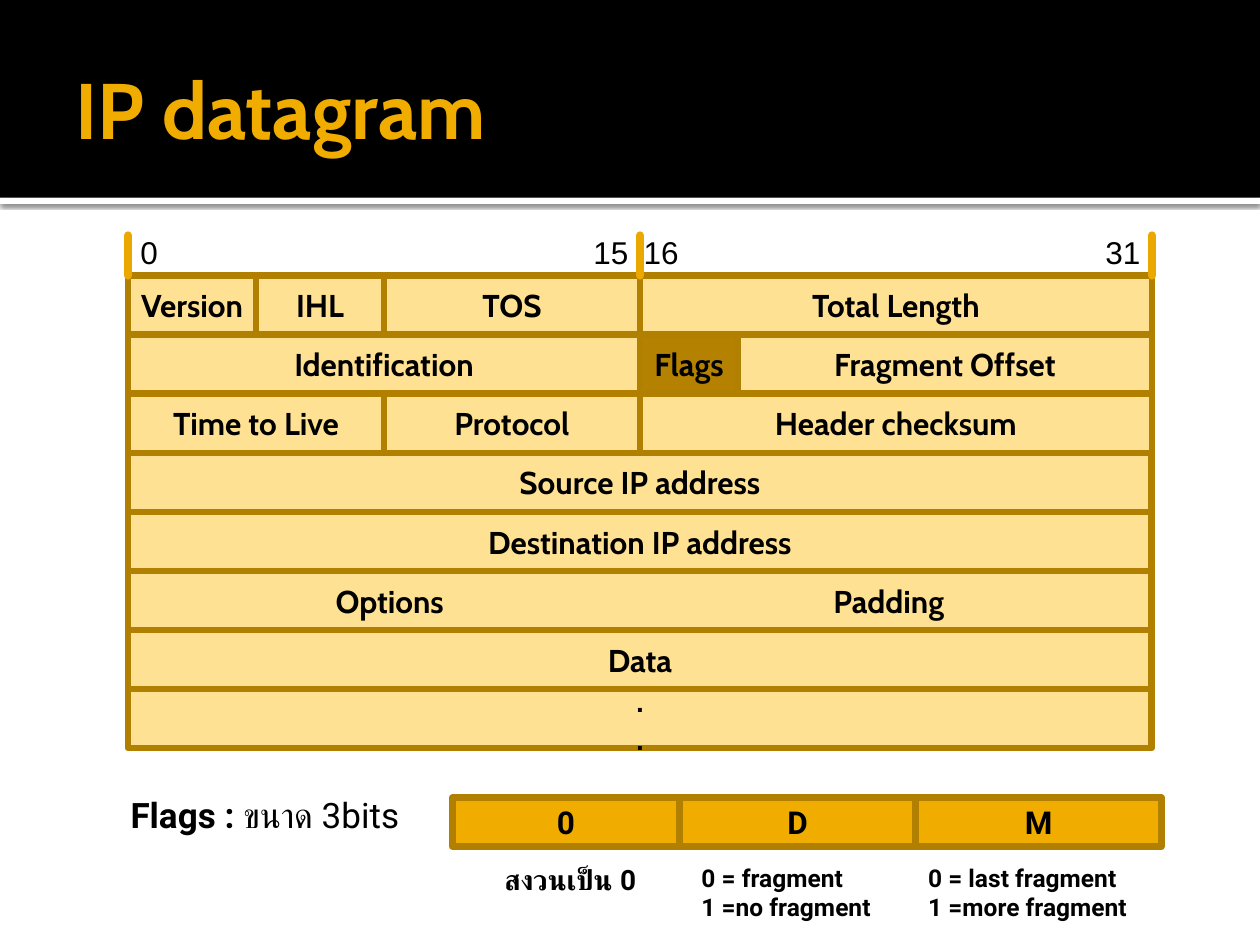
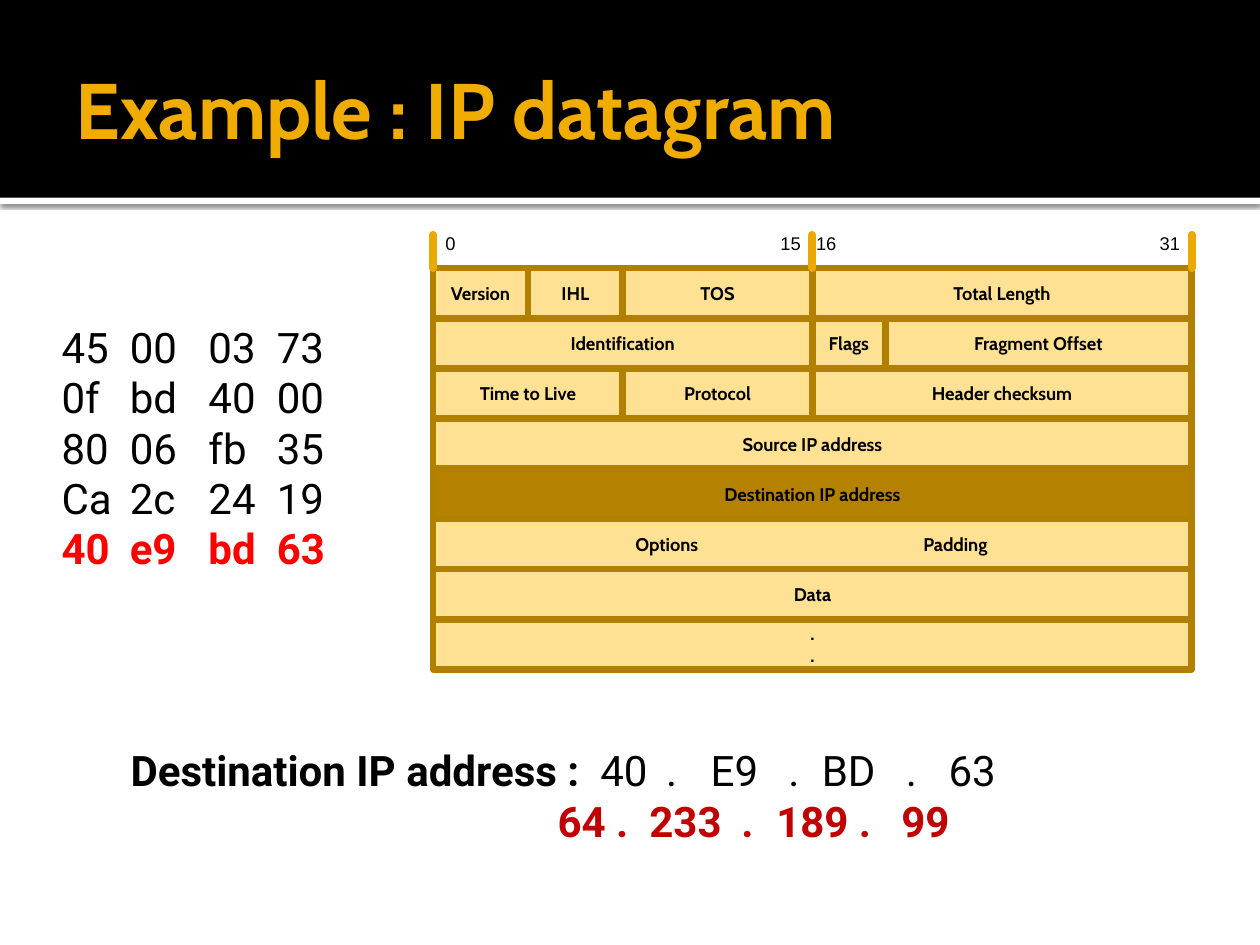
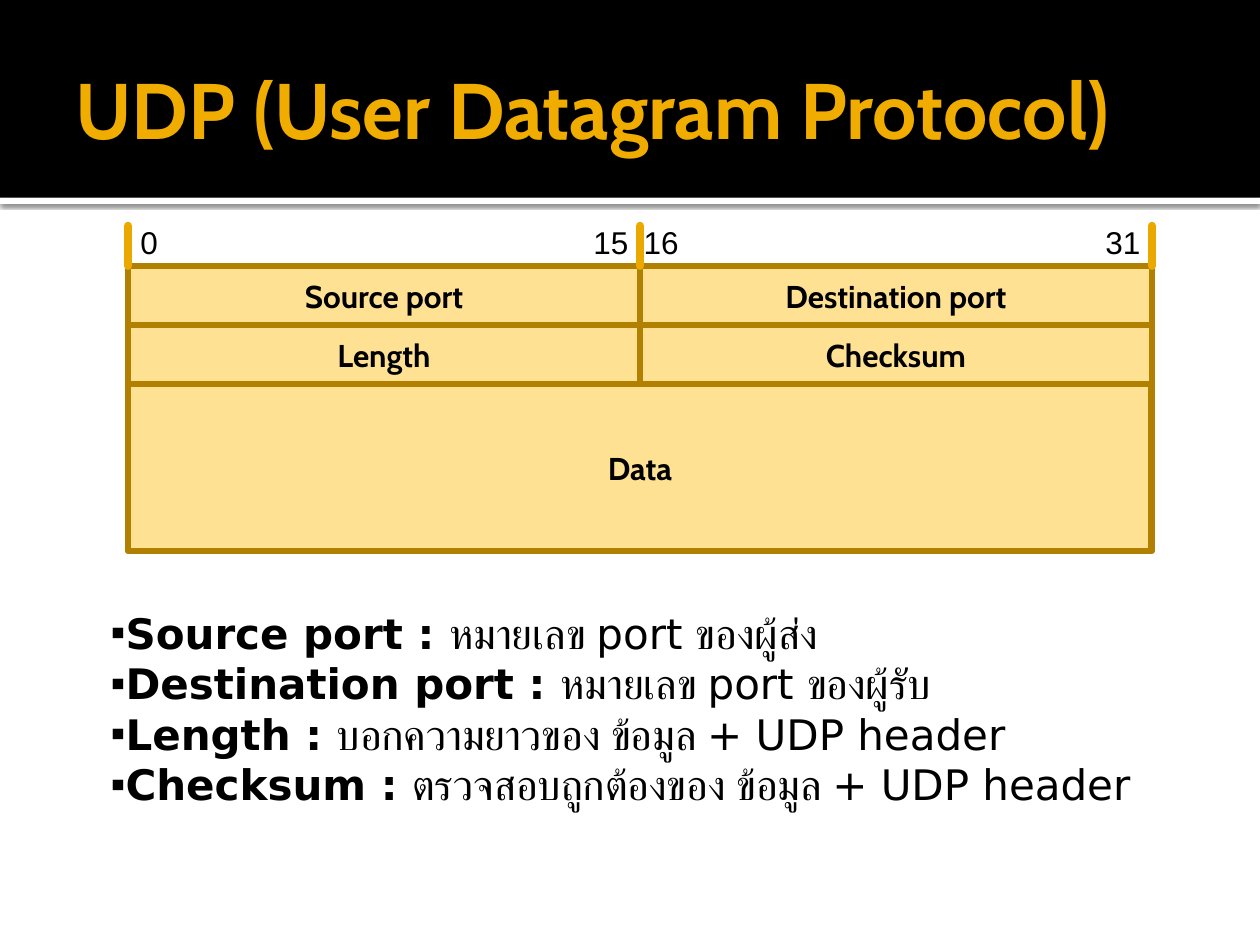
from dataclasses import dataclass
from itertools import accumulate

from lxml import etree
from pptx import Presentation
from pptx.dml.color import RGBColor
from pptx.enum import shapes, text
from pptx.oxml import ns
from pptx.util import Pt

BLACK = RGBColor(0x00, 0x00, 0x00)
WHITE = RGBColor(0xFF, 0xFF, 0xFF)
AMBER = RGBColor(0xF0, 0xAD, 0x00)
TICK = RGBColor(0xEB, 0xA9, 0x00)
BORDER = RGBColor(0xB2, 0x80, 0x00)
PALE = RGBColor(0xFF, 0xE1, 0x93)
DARK = RGBColor(0xB4, 0x82, 0x00)
RED = RGBColor(0xFF, 0x00, 0x00)
DEEP_RED = RGBColor(0xC0, 0x00, 0x00)
LEFT = text.PP_ALIGN.LEFT
CENTER = text.PP_ALIGN.CENTER
WIDTH, HEIGHT = 720, 540
BITS = 32


@dataclass(frozen=True)
class Style:
    """Font of a span."""
    name: str
    size: float
    bold: bool = False
    color: RGBColor = BLACK

    def apply(self, font) -> None:
        """Set every font value."""
        values = {"name": self.name, "size": Pt(self.size), "bold": self.bold}
        for key, value in values.items():
            setattr(font, key, value)
        font.color.rgb = self.color


@dataclass(frozen=True)
class Span:
    """Words in one style."""
    words: str
    style: Style


@dataclass(frozen=True)
class Para:
    """Paragraph with optional tab stops and bullet."""
    spans: tuple[Span, ...]
    align: int = LEFT
    tabs: tuple[float, ...] = ()
    bullet: str = ""


@dataclass(frozen=True)
class Area:
    """Rectangle in points."""
    left: float
    top: float
    width: float
    height: float

    def lengths(self) -> tuple:
        """Give the four lengths as Pt."""
        return Pt(self.left), Pt(self.top), Pt(self.width), Pt(self.height)


@dataclass(frozen=True)
class Field:
    """Header field whose width is counted in bits."""
    name: str
    bits: float = BITS


@dataclass(frozen=True)
class Diagram:
    """Place and measures of a header diagram."""
    left: float
    top: float
    width: float
    row: float
    size: float
    tick: float
    tabs: tuple[float, ...] = ()
    marked: str = ""
    last_row: float = 0


IP_ROWS = (
    (Field("Version", 4), Field("IHL", 4), Field("TOS", 8), Field("Total Length", 16)),
    (Field("Identification", 16), Field("Flags", 3.07), Field("Fragment Offset", 12.93)),
    (Field("Time to Live", 8), Field("Protocol", 8), Field("Header checksum", 16)),
    (Field("Source IP address"),),
    (Field("Destination IP address"),),
    (Field("\tOptions\tPadding"),),
    (Field("Data"),),
    (Field(".\n."),),
)
UDP_ROWS = (
    (Field("Source port", 16), Field("Destination port", 16)),
    (Field("Length", 16), Field("Checksum", 16)),
    (Field("Data"),),
)
HEX_ROWS = ("45\t00\t03\t73", "0f\tbd\t40\t00", "80\t06\tfb\t35",
            "Ca\t2c\t24\t19", "40\te9\tbd\t63")
UDP_NOTES = (
    ("Source port : ", "หมายเลข port ของผู้ส่ง"),
    ("Destination port : ", "หมายเลข port ของผู้รับ"),
    ("Length : ", "บอกความยาวของ ข้อมูล + UDP header"),
    ("Checksum : ", "ตรวจสอบถูกต้องของ ข้อมูล + UDP header"),
)


def add_xml(parent, tag: str, **attributes):
    """Append a drawing element and return it."""
    return etree.SubElement(parent, ns.qn(tag), attributes)


def lines(words: str, style: Style, align: int = LEFT,
          tabs: tuple[float, ...] = ()) -> list[Para]:
    """Make one paragraph of each line."""
    return [Para((Span(line, style),), align, tabs) for line in words.split("\n")]


def write(frame, paras: list[Para], anchor: int) -> None:
    """Fill a text frame; only text with tab stops wraps."""
    frame.word_wrap = any(para.tabs for para in paras)
    frame.vertical_anchor = anchor
    for index, para in enumerate(paras):
        paragraph = frame.add_paragraph() if index else frame.paragraphs[0]
        paragraph.alignment = para.align
        properties = paragraph._p.get_or_add_pPr()
        if para.bullet:
            add_xml(properties, "a:buFont", typeface="Arial")
            add_xml(properties, "a:buChar", char=para.bullet)
        if para.tabs:
            stops = add_xml(properties, "a:tabLst")
            for stop in para.tabs:
                add_xml(stops, "a:tab", pos=str(int(Pt(stop))), algn="l")
        for span in para.spans:
            run = paragraph.add_run()
            run.text = span.words
            span.style.apply(run.font)


def add_text(page, area: Area, paras: list[Para],
             anchor: int = text.MSO_ANCHOR.TOP):
    """Add a text box."""
    box = page.shapes.add_textbox(*area.lengths())
    write(box.text_frame, paras, anchor)
    return box


def add_box(page, area: Area, fill: RGBColor, border: RGBColor | None = None,
            paras: list[Para] | None = None):
    """Add a filled rectangle."""
    box = page.shapes.add_shape(shapes.MSO_SHAPE.RECTANGLE, *area.lengths())
    box.shadow.inherit = False
    box.fill.solid()
    box.fill.fore_color.rgb = fill
    if border is None:
        box.line.fill.background()
    else:
        box.line.color.rgb = border
        box.line.width = Pt(3.78)
    if paras:
        write(box.text_frame, paras, text.MSO_ANCHOR.MIDDLE)
    return box


def add_tick(page, x: float, bottom: float, height: float) -> None:
    """Add a vertical mark with round ends."""
    tick = page.shapes.add_connector(shapes.MSO_CONNECTOR.STRAIGHT, Pt(x),
                                     Pt(bottom), Pt(x), Pt(bottom - height))
    tick.line.color.rgb = TICK
    tick.line.width = Pt(4.5)
    properties = tick.element.spPr
    properties.find(ns.qn("a:ln")).set("cap", "rnd")
    add_xml(properties, "a:effectLst")


def add_page(deck, title: str):
    """Add a page with the title band."""
    page = deck.slides.add_slide(deck.slide_layouts[6])
    stripe = add_box(page, Area(0, 113, WIDTH, 3.6), WHITE)
    effects = stripe.element.spPr.find(ns.qn("a:effectLst"))
    shadow = add_xml(effects, "a:outerShdw", blurRad=str(int(Pt(2.5))),
                     dist=str(int(Pt(0.8))), dir="5400000", algn="tl", rotWithShape="0")
    color = add_xml(shadow, "a:srgbClr", val=str(BLACK))
    add_xml(color, "a:alpha", val="60000")
    add_box(page, Area(0, 0, WIDTH, 113), BLACK)
    add_text(page, Area(36, 12.3, 648, 98.6),
             lines(title, Style("Cabin", 45, True, AMBER)), text.MSO_ANCHOR.MIDDLE)
    return page


def add_diagram(page, diagram: Diagram, rows) -> None:
    """Draw the fields, the bit numbers and the marks above them."""
    style = Style("Cabin", diagram.size, True)
    bit = diagram.width / BITS
    for index, fields in enumerate(rows):
        top = diagram.top + index * diagram.row
        is_last = index == len(rows) - 1
        height = diagram.last_row if is_last and diagram.last_row else diagram.row
        starts = accumulate((field.bits for field in fields), initial=0)
        for field, start in zip(fields, starts):
            tabbed = "\t" in field.name
            paras = lines(field.name, style, LEFT if tabbed else CENTER,
                          diagram.tabs if tabbed else ())
            add_box(page, Area(diagram.left + start * bit, top, field.bits * bit, height),
                    DARK if field.name == diagram.marked else PALE, BORDER, paras)

    middle = diagram.left + diagram.width / 2
    right = diagram.left + diagram.width
    number_width = 14.4 + 1.11 * diagram.size
    numbers = {"0": diagram.left, "15": middle + 0.7 - number_width,
               "16": middle - 5, "31": right + 0.7 - number_width}
    for number, left in numbers.items():
        width = 14.4 + 0.556 * diagram.size * len(number)
        add_text(page, Area(left, diagram.top - diagram.tick - 5, width,
                            7.2 + 1.2 * diagram.size),
                 lines(number, Style("Arial", diagram.size)))
    for x in (middle, diagram.left, right):
        add_tick(page, x, diagram.top, diagram.tick)


def build_datagram(deck) -> None:
    """Show the IP header and its flags."""
    page = add_page(deck, "IP datagram")
    add_diagram(page, Diagram(73.2, 157.5, 585, 33.75, 18, 23, (111.5, 396), "Flags"),
                IP_ROWS)
    add_text(page, Area(67.5, 450, 182, 31.5), [Para((
        Span("Flags : ", Style("Roboto", 20, True)),
        Span("ขนาด 3bits", Style("Roboto", 20))))])
    widths = (129.8, 135, 140.4)
    for name, left, width in zip("0DM", accumulate(widths, initial=258.5), widths):
        add_box(page, Area(left, 455.8, width, 28), AMBER, BORDER,
                lines(name, Style("Roboto", 18, True), CENTER))
    meanings = (
        (Area(281.3, 489.6, 96, 26.6), "สงวนเป็น 0", 16),
        (Area(393.8, 489.6, 127.5, 41), "0 = fragment\n1 =no fragment", 14),
        (Area(523.3, 489.6, 146, 41), "0 = last fragment\n1 =more fragment", 14),
    )
    for area, words, size in meanings:
        add_text(page, area, lines(words, Style("Roboto", size, True)))


def build_example(deck) -> None:
    """Read the destination address out of a header."""
    page = add_page(deck, "Example : IP datagram")
    plain = Style("Roboto", 24)
    bold = Style("Roboto", 24, True)
    hex_paras = lines("\n".join(HEX_ROWS[:-1]), plain, tabs=(39, 84, 123))
    hex_paras += lines(HEX_ROWS[-1], Style("Roboto", 24, True, RED), tabs=(39, 84, 123))
    add_text(page, Area(28.1, 180, 186, 152.6), hex_paras)
    add_diagram(page, Diagram(247.5, 153.2, 433.5, 28.67, 10.5, 19, (108.5, 273),
                              "Destination IP address"), IP_ROWS)
    add_text(page, Area(67.5, 422, 594, 65.5), [
        Para((Span("Destination IP address :", bold),
              Span("\t40\t.\tE9\t.\tBD\t.\t63", plain)),
             tabs=(268.5, 306, 331.5, 376, 395, 443, 467.5)),
        Para((Span("\t64 .\t233\t.\t189 .\t99", Style("Roboto", 24, True, DEEP_RED)),),
             tabs=(244, 296.5, 349, 369, 440.5)),
    ])


def build_udp(deck) -> None:
    """Show the UDP header and explain its fields."""
    page = add_page(deck, "UDP (User Datagram Protocol)")
    add_diagram(page, Diagram(73.2, 152, 585, 33.75, 18, 23, last_row=95.5), UDP_ROWS)
    add_text(page, Area(56.2, 343.5, 643, 124), [
        Para((Span(term, Style("DejaVu Sans", 24, True)),
              Span(meaning, Style("DejaVu Sans", 24))), bullet="▪")
        for term, meaning in UDP_NOTES])


def main() -> None:
    """Build and save the deck."""
    deck = Presentation()
    deck.slide_width, deck.slide_height = Pt(WIDTH), Pt(HEIGHT)
    for build in (build_datagram, build_example, build_udp):
        build(deck)
    deck.save("out.pptx")


if __name__ == "__main__":
    main()
